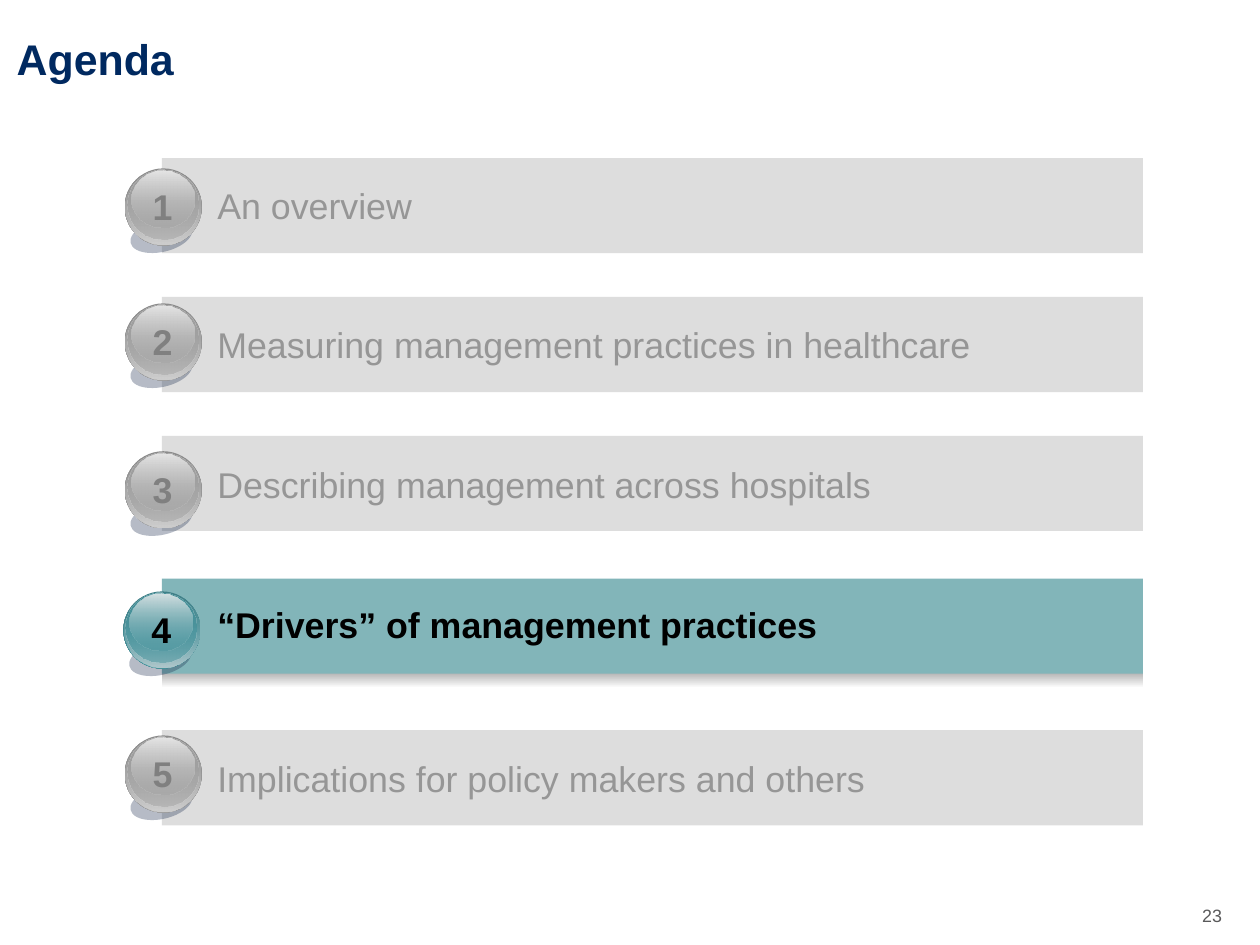
from pptx import Presentation
from pptx.dml.color import RGBColor
from pptx.enum.shapes import MSO_SHAPE
from pptx.enum.text import MSO_ANCHOR, PP_ALIGN
from pptx.oxml.ns import qn
from pptx.util import Pt
from lxml import etree

RECT, OVAL = MSO_SHAPE.RECTANGLE, MSO_SHAPE.OVAL
TOP, MIDDLE = MSO_ANCHOR.TOP, MSO_ANCHOR.MIDDLE
LEFT, CENTER = PP_ALIGN.LEFT, PP_ALIGN.CENTER

# Content: label, then tops of bar, text and ball
TITLE, PAGE, ACTIVE = "Agenda", "23", 4
ROWS = [
    ("An overview", 123, 143, 131),
    ("Measuring management practices in healthcare", 231, 251, 236),
    ("Describing management across hospitals", 339, 360, 351),
    ("“Drivers” of management practices", 450, 469, 460),
    ("Implications for policy makers and others", 568, 589, 572),
]

COLORS = {"title": "002960", "page": "59595A", "shade": "0F2145",
          "fade": "A4A4A4", "white": "FFFFFF"}
GREY = {"bar": "DDDDDD", "text": "969696", "num": "808080", "dark": "8C8C8C",
        "main": "A4A4A4", "rim": "CECECE", "core": "A1A1A1", "shine": "E5E5E5"}
TEAL = {"bar": "82B5B9", "text": "000000", "num": "000000", "dark": "3E7F87",
        "main": "48959E", "rim": "B1C8CC", "core": "47929B", "shine": "D6E1E3"}

# Ball layers: box inside the ball, then (color, opacity) at top and bottom
LAYERS = [
    ((0, 0, 60, 60), ("dark", 100), ("main", 100)),
    ((1, 1, 58, 58), ("main", 0), ("rim", 100)),
    ((2, 1, 55, 54), ("core", 100), ("main", 48)),
    ((5, 2, 49, 44), ("shine", 100), ("main", 38)),
]

PX = 9144  # 100 px to the inch
BAR_X, BAR_W, BAR_H = 126, 763, 74
TEXT_X, TEXT_W, TEXT_H = 169, 694, 33
BALL_X = 97


def emu(*box):
    return [n * PX for n in box]


def alpha(fill, values):
    """Set the opacity of each color of a fill, in order."""
    colors = list(fill._xPr.iter(qn("a:srgbClr")))
    for color, value in zip(colors, values):
        if value < 100:
            etree.SubElement(color, qn("a:alpha")).set("val", str(value * 1000))


def shape(group, kind, box, color=None):
    item = group.shapes.add_shape(kind, *emu(*box))
    item.shadow.inherit = False
    item.line.fill.background()
    if color:
        item.fill.solid()
        item.fill.fore_color.rgb = RGBColor.from_string(color)
    else:
        item.fill.background()
    return item


def blend(item, colors, values=(100, 100)):
    item.fill.gradient()
    item.fill.gradient_angle = 270
    for stop, color in zip(item.fill.gradient_stops, colors):
        stop.color.rgb = RGBColor.from_string(color)
    alpha(item.fill, values)


def write(item, text, size, color, bold=False, align=LEFT, anchor=TOP, wrap=True):
    frame = item.text_frame
    form = {"margin_left": 0, "margin_right": 0, "margin_top": 0,
            "margin_bottom": 0, "word_wrap": wrap, "vertical_anchor": anchor}
    for key, value in form.items():
        setattr(frame, key, value)
    para = frame.paragraphs[0]
    para.alignment = align
    run = para.add_run()
    run.text = text
    for key, value in {"name": "Arial", "size": Pt(size), "bold": bold}.items():
        setattr(run.font, key, value)
    run.font.color.rgb = RGBColor.from_string(color)


def ball(group, x, y, num, tone):
    shade = shape(group, OVAL, (x + 4, y + 40, 49, 25), COLORS["shade"])
    shade.rotation = 347.1
    alpha(shade.fill, [30])
    for (dx, dy, w, h), *stops in LAYERS:
        layer = shape(group, OVAL, (x + dx, y + dy, w, h))
        blend(layer, [tone[name] for name, _ in stops], [a for _, a in stops])
    disc = shape(group, OVAL, (x + 19, y + 19, 21, 21))
    write(disc, str(num), 20, tone["num"], True, CENTER, MIDDLE, False)


def main():
    prs = Presentation()
    prs.slide_width, prs.slide_height = emu(980, 735)
    slide = prs.slides.add_slide(prs.slide_layouts[5])

    # Title and page number
    title = slide.shapes.title
    title.left, title.top, title.width, title.height = emu(13, 25, 943, 40)
    write(title, TITLE, 24, COLORS["title"], True)
    page = slide.shapes.add_textbox(*emu(935, 704, 21, 17))
    write(page, PAGE, 10, COLORS["page"], wrap=False)

    # Agenda rows
    for num, (label, bar_y, text_y, ball_y) in enumerate(ROWS, 1):
        live = num == ACTIVE
        tone = TEAL if live else GREY
        group = slide.shapes.add_group_shape()
        if live:
            fade = shape(group, RECT, (BAR_X, bar_y + 71, BAR_W, 14))
            blend(fade, (COLORS["fade"], COLORS["white"]))
        shape(group, RECT, (BAR_X, bar_y, BAR_W, BAR_H), tone["bar"])
        text = group.shapes.add_textbox(*emu(TEXT_X, text_y, TEXT_W, TEXT_H))
        write(text, label, 20, tone["text"], live)
        ball(group, BALL_X - live, ball_y, num, tone)

    prs.save("out.pptx")


if __name__ == "__main__":
    main()
